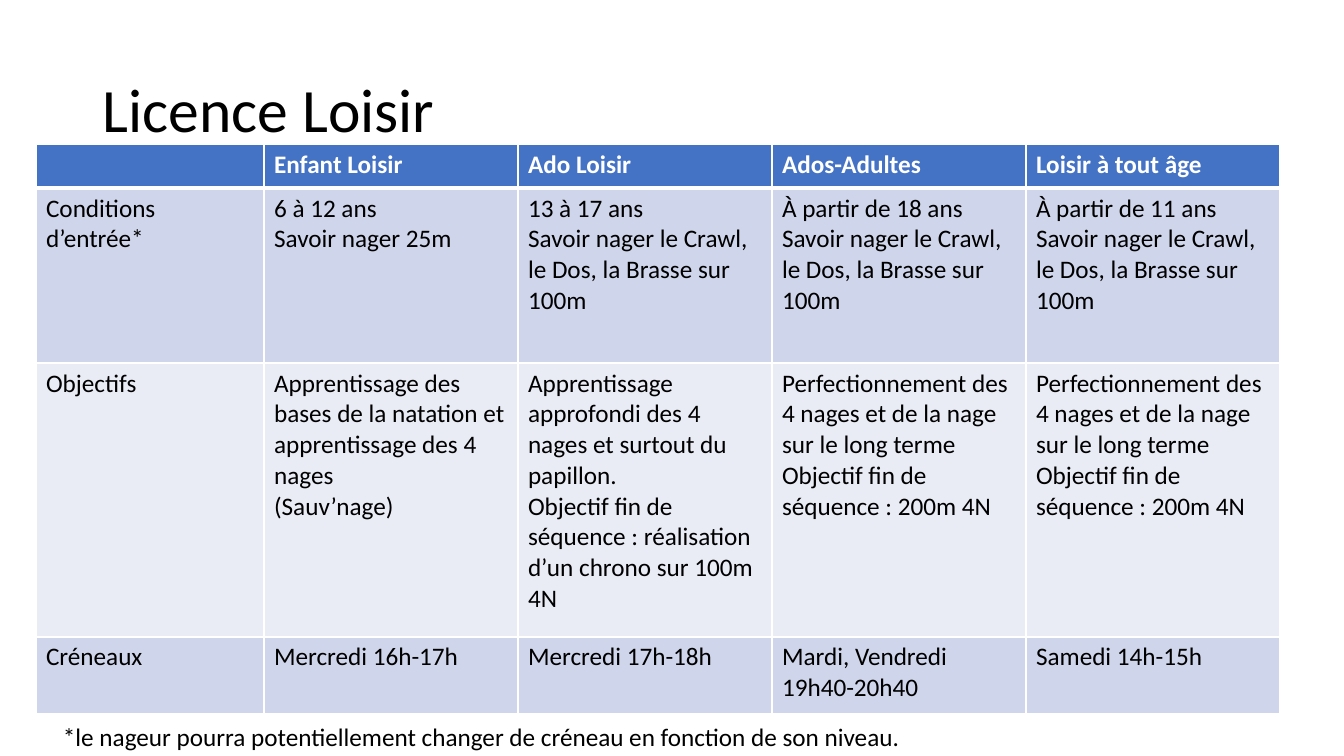
import dataclasses

import lxml.etree
import pptx
import pptx.dml.color
import pptx.enum.text
import pptx.oxml.ns
import pptx.util

EMU_PER_PX = 914400 / 100.8


@dataclasses.dataclass(frozen=True)
class Theme:
    font: str = "Calibri"
    title_size: int = 44
    body_size: int = 18
    text: str = "000000"
    header_text: str = "FFFFFF"
    header_fill: str = "4472C4"
    bands: tuple = ("CFD5EA", "E9EBF5")
    border: str = "FFFFFF"


THEME = Theme()
COLUMN_WIDTHS = [228] + [254] * 4
ROW_HEIGHTS = [44, 175, 274, 77]
CRAWL_TEST = "Savoir nager le Crawl, le Dos, la Brasse sur 100m"
ADVANCED_GOALS = [
    "Perfectionnement des 4 nages et de la nage sur le long terme",
    "Objectif fin de séquence : 200m 4N",
]
LICENCES = [
    [[], ["Enfant Loisir"], ["Ado Loisir"], ["Ados-Adultes"], ["Loisir à tout âge"]],
    [
        ["Conditions d’entrée*"],
        ["6 à 12 ans", "Savoir nager 25m"],
        ["13 à 17 ans", CRAWL_TEST],
        ["À partir de 18 ans", CRAWL_TEST],
        ["À partir de 11 ans", CRAWL_TEST],
    ],
    [
        ["Objectifs"],
        ["Apprentissage des bases de la natation et apprentissage des 4 nages",
         "(Sauv’nage)"],
        ["Apprentissage approfondi des 4 nages et surtout du papillon.",
         "Objectif fin de séquence : réalisation d’un chrono sur 100m 4N"],
        ADVANCED_GOALS,
        ADVANCED_GOALS,
    ],
    [
        ["Créneaux"],
        ["Mercredi 16h-17h"],
        ["Mercredi 17h-18h"],
        ["Mardi, Vendredi", "19h40-20h40"],
        ["Samedi 14h-15h"],
    ],
]


def px(length):
    return pptx.util.Emu(round(length * EMU_PER_PX))


def rgb(color):
    return pptx.dml.color.RGBColor.from_string(color)


def write_paragraphs(text_frame, lines, size, color, bold=False, line_spacing=None):
    for index, line in enumerate(lines):
        paragraph = text_frame.add_paragraph() if index else text_frame.paragraphs[0]
        paragraph.line_spacing = line_spacing
        run = paragraph.add_run()
        run.text = line
        run.font.name = THEME.font
        run.font.size = pptx.util.Pt(size)
        run.font.bold = bold
        run.font.color.rgb = rgb(color)


def add_text(slide, left, top, width, height, line, size,
             anchor=pptx.enum.text.MSO_ANCHOR.TOP, line_spacing=None):
    box = slide.shapes.add_textbox(px(left), px(top), px(width), px(height))
    box.text_frame.word_wrap = True
    box.text_frame.vertical_anchor = anchor
    write_paragraphs(box.text_frame, [line], size, THEME.text,
                     line_spacing=line_spacing)


def set_borders(cell, widths):
    """Draw the cell's edges; widths maps L, R, T and B, in that order, to points."""
    qn = pptx.oxml.ns.qn
    properties = cell._tc.get_or_add_tcPr()
    for side, width in widths.items():
        line = lxml.etree.SubElement(properties, qn(f"a:ln{side}"),
                                     w=str(pptx.util.Pt(width)))
        fill = lxml.etree.SubElement(line, qn("a:solidFill"))
        lxml.etree.SubElement(fill, qn("a:srgbClr"), val=THEME.border)


def format_cell(cell, row, lines):
    is_header = row == 0
    set_borders(cell, {"L": 1, "R": 1, "T": 3 if row == 1 else 1,
                       "B": 3 if is_header else 1})
    cell.fill.solid()
    cell.fill.fore_color.rgb = rgb(
        THEME.header_fill if is_header else THEME.bands[(row - 1) % 2])
    write_paragraphs(cell.text_frame, lines, THEME.body_size,
                     THEME.header_text if is_header else THEME.text, is_header)


def add_licence_table(slide, left, top):
    table = slide.shapes.add_table(
        len(ROW_HEIGHTS), len(COLUMN_WIDTHS), px(left), px(top),
        px(sum(COLUMN_WIDTHS)), px(sum(ROW_HEIGHTS))).table
    for column, width in zip(table.columns, COLUMN_WIDTHS):
        column.width = px(width)
    for row, height in zip(table.rows, ROW_HEIGHTS):
        row.height = px(height)
    for row, entries in enumerate(LICENCES):
        for column, lines in enumerate(entries):
            format_cell(table.cell(row, column), row, lines)


def main():
    presentation = pptx.Presentation()
    presentation.slide_width = px(1344)
    presentation.slide_height = px(756)
    slide = presentation.slides.add_slide(presentation.slide_layouts[6])
    add_text(slide, 93, 40, 1159, 146, "Licence Loisir", THEME.title_size,
             pptx.enum.text.MSO_ANCHOR.MIDDLE, 0.9)
    add_licence_table(slide, 36, 144)
    add_text(slide, 53, 716, 1231, 40,
             "*le nageur pourra potentiellement changer de créneau "
             "en fonction de son niveau.", THEME.body_size)
    presentation.save("out.pptx")


if __name__ == "__main__":
    main()
